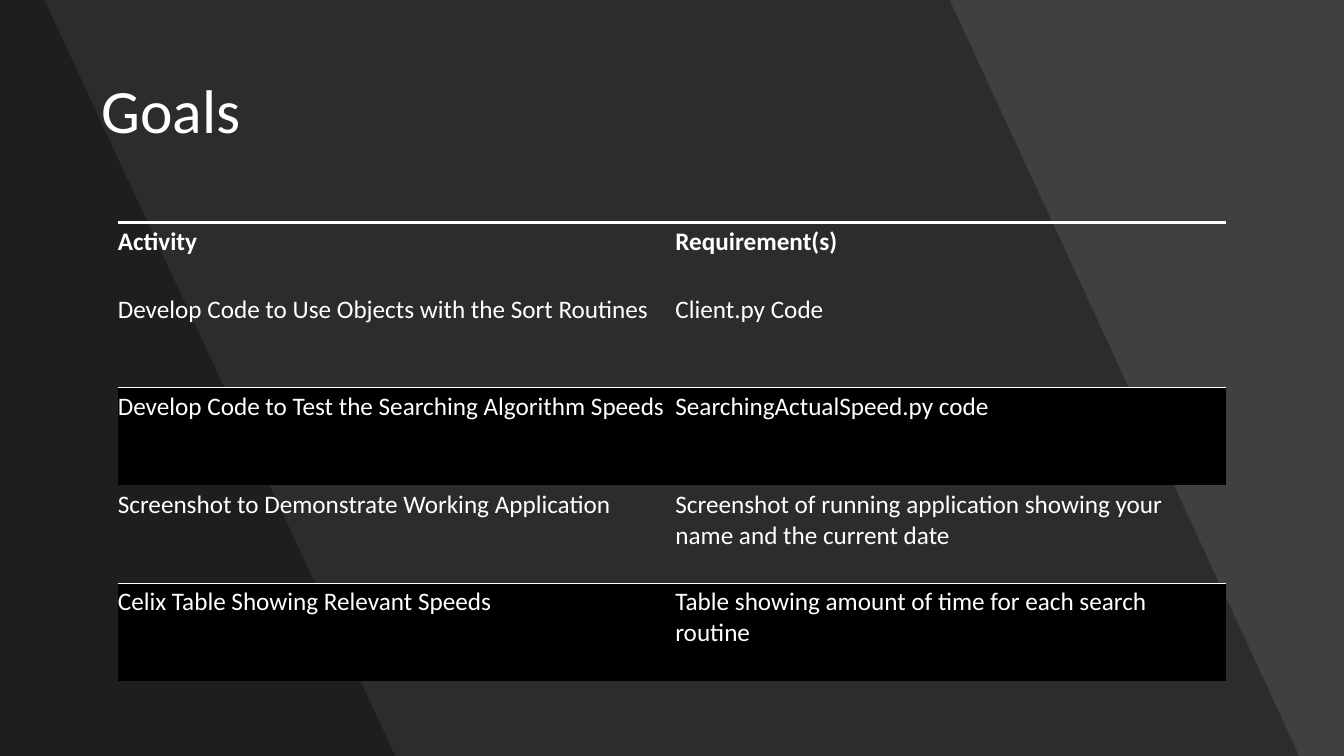
from dataclasses import dataclass

from lxml.etree import SubElement
from pptx import Presentation
from pptx.dml.color import RGBColor
from pptx.enum.text import MSO_ANCHOR
from pptx.oxml import parse_xml
from pptx.oxml.ns import nsdecls, qn
from pptx.slide import Slide
from pptx.table import _Cell
from pptx.text.text import _Paragraph
from pptx.util import Cm, Pt

WIDTH, HEIGHT = 33.87, 19.05
WHITE, BLACK, CHARCOAL = "FFFFFF", "000000", "404040"
FONT = "Calibri"
NO_STYLE = "{2D5ABB26-0587-4C30-8999-92F81FD0307C}"
COLUMN_WIDTHS = (14.05, 13.87)
CELL_FORMAT = {
    "margin_left": Cm(0),
    "margin_top": Cm(0.1),
    "margin_right": Cm(0.23),
    "margin_bottom": Cm(0.69),
    "vertical_anchor": MSO_ANCHOR.TOP,
}


@dataclass(frozen=True)
class Shade:
    """Dark area from the left edge of the slide to a slanted right edge."""
    top_right: float
    bottom_right: float


@dataclass(frozen=True)
class Goal:
    activity: str
    requirement: str
    height: float = 2.46
    bold: bool = False
    banded: bool = False
    rule: float = 0


SHADES = (Shade(23.93, 32.74), Shade(1.12, 9.96))
GOALS = (
    Goal("Activity", "Requirement(s)", height=1.7, bold=True, rule=2.25),
    Goal("Develop Code to Use Objects with the Sort Routines", "Client.py Code"),
    Goal("Develop Code to Test the Searching Algorithm Speeds",
         "SearchingActualSpeed.py code", banded=True, rule=0.5),
    Goal("Screenshot to Demonstrate Working Application",
         "Screenshot of running application showing your name and the current date"),
    Goal("Celix Table Showing Relevant Speeds",
         "Table showing amount of time for each search routine", banded=True, rule=0.5),
)


def color(hex_code: str) -> RGBColor:
    return RGBColor.from_string(hex_code)


def write(paragraph: _Paragraph, text: str, size: float, bold: bool = False) -> None:
    run = paragraph.add_run()
    run.text = text
    for attribute, value in {"name": FONT, "size": Pt(size), "bold": bold}.items():
        setattr(run.font, attribute, value)
    run.font.color.rgb = color(WHITE)


def draw_shade(slide: Slide, shade: Shade) -> None:
    outline = slide.shapes.build_freeform(0, 0)
    outline.add_line_segments([
        (Cm(shade.top_right), 0),
        (Cm(shade.bottom_right), Cm(HEIGHT)),
        (0, Cm(HEIGHT)),
    ])
    area = outline.convert_to_shape()
    area.shadow.inherit = False
    area.line.fill.background()
    area.fill.solid()
    area.fill.fore_color.rgb = color(BLACK)
    black = area.fill._xPr.find(qn("a:solidFill"))[0]
    SubElement(black, qn("a:alpha"), val="30000")


def draw_title(slide: Slide, text: str) -> None:
    title = slide.shapes.add_textbox(Cm(2.31), Cm(1.02), Cm(29.24), Cm(3.68)).text_frame
    title.word_wrap = True
    title.vertical_anchor = MSO_ANCHOR.MIDDLE
    title.paragraphs[0].line_spacing = 0.9
    write(title.paragraphs[0], text, 44)


def set_borders(cell: _Cell, top: float, bottom: float) -> None:
    """Rule the top and bottom at the given point widths; 0 leaves no line."""
    properties = cell._tc.get_or_add_tcPr()
    for position, (side, width) in enumerate(
            {"L": 0, "R": 0, "T": top, "B": bottom}.items()):
        paint = (f'<a:solidFill><a:srgbClr val="{WHITE}"/></a:solidFill>'
                 if width else "<a:noFill/>")
        properties.insert(position, parse_xml(
            f'<a:ln{side} {nsdecls("a")} w="{Pt(width)}">{paint}</a:ln{side}>'))


def draw_goals(slide: Slide, goals: tuple[Goal, ...]) -> None:
    table = slide.shapes.add_table(
        len(goals), len(COLUMN_WIDTHS), Cm(2.97), Cm(5.61),
        Cm(sum(COLUMN_WIDTHS)), Cm(sum(goal.height for goal in goals))).table
    table._tbl.tblPr.find(qn("a:tableStyleId")).text = NO_STYLE
    for column, width in zip(table.columns, COLUMN_WIDTHS):
        column.width = Cm(width)
    rules_below = [goal.rule for goal in goals[1:]] + [0]
    for row, goal, rule_below in zip(table.rows, goals, rules_below):
        row.height = Cm(goal.height)
        for cell, text in zip(row.cells, (goal.activity, goal.requirement)):
            for attribute, value in CELL_FORMAT.items():
                setattr(cell, attribute, value)
            write(cell.text_frame.paragraphs[0], text, 18, goal.bold)
            if goal.banded:
                cell.fill.solid()
                cell.fill.fore_color.rgb = color(BLACK)
            else:
                cell.fill.background()
            set_borders(cell, goal.rule, rule_below)


def main() -> None:
    presentation = Presentation()
    presentation.slide_width, presentation.slide_height = Cm(WIDTH), Cm(HEIGHT)
    slide = presentation.slides.add_slide(presentation.slide_layouts[6])
    slide.background.fill.solid()
    slide.background.fill.fore_color.rgb = color(CHARCOAL)
    for shade in SHADES:
        draw_shade(slide, shade)
    draw_title(slide, "Goals")
    draw_goals(slide, GOALS)
    presentation.save("out.pptx")


if __name__ == "__main__":
    main()
